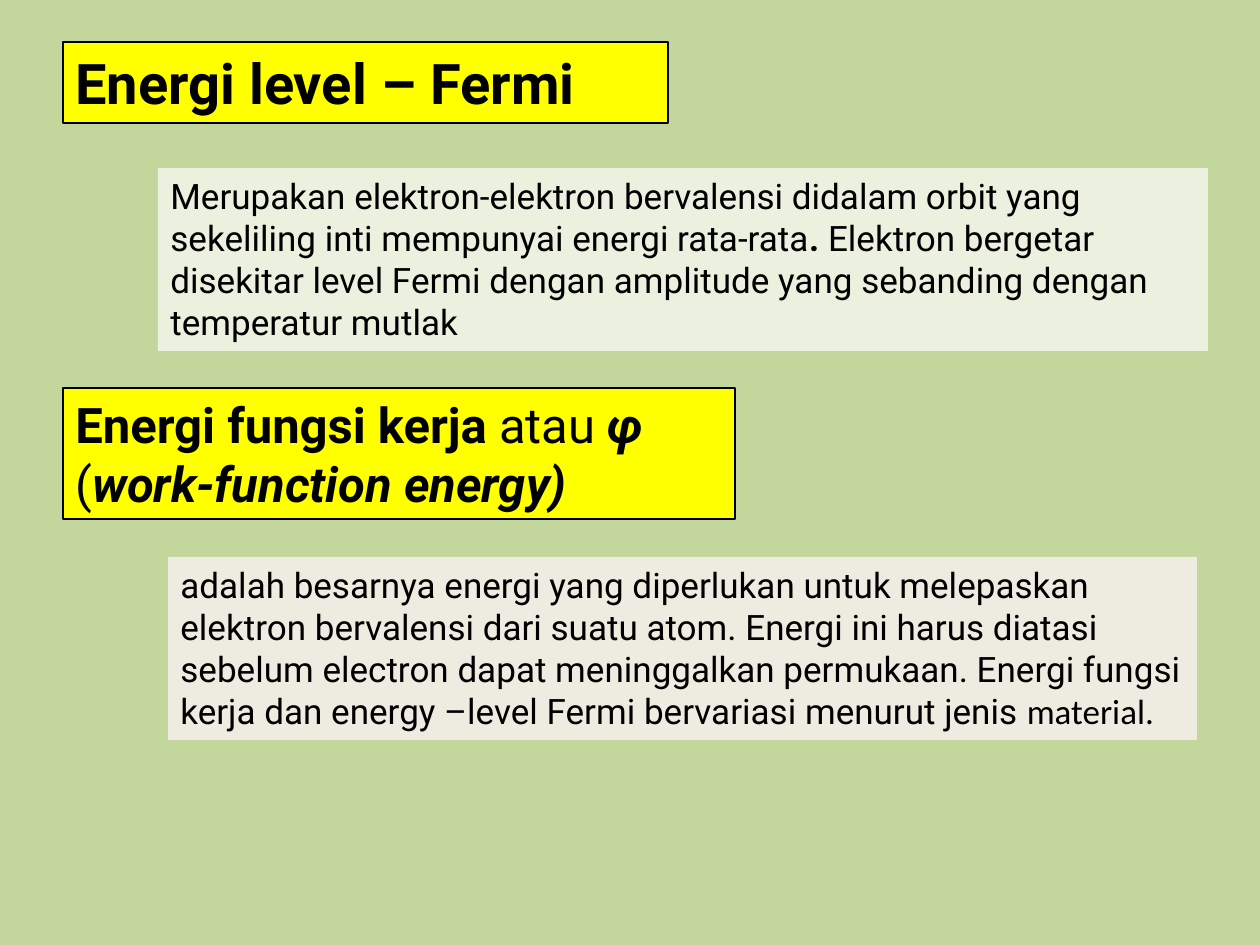
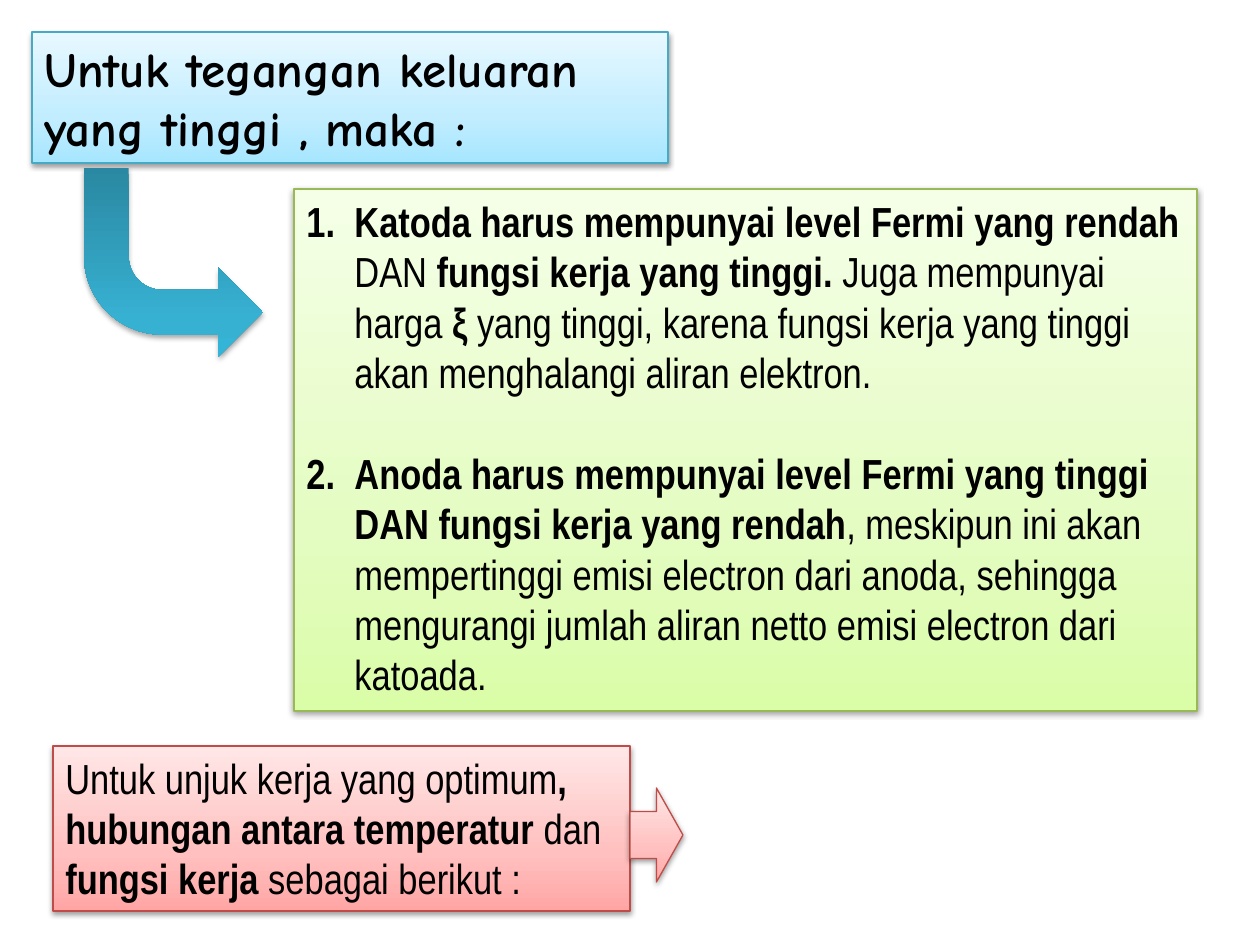
"""Build two slides on Fermi level and work-function energy."""
import pptx
import pptx.dml.color
import pptx.enum.shapes
import pptx.enum.text
import pptx.oxml
import pptx.oxml.ns
import pptx.util

RGB = pptx.dml.color.RGBColor
SHAPE = pptx.enum.shapes.MSO_SHAPE
PX = 914400 / 126
PAGE = (1260, 945)

BLACK = RGB(0x00, 0x00, 0x00)
WHITE = RGB(0xFF, 0xFF, 0xFF)
MOSS = RGB(0xC3, 0xD6, 0x9B)
YELLOW = RGB(0xFF, 0xFF, 0x00)
PALE_GREEN = RGB(0xEB, 0xF1, 0xDE)
CREAM = RGB(0xEE, 0xEC, 0xE1)
GREEN_EDGE = RGB(0x98, 0xB9, 0x55)
RED_EDGE = RGB(0xBF, 0x4C, 0x48)
BLUE_EDGE = RGB(0x46, 0xAA, 0xC5)

GREEN_FADE = ((0, RGB(0xDA, 0xFD, 0xA7)), (35, RGB(0xE4, 0xFC, 0xC2)), (100, RGB(0xF5, 0xFF, 0xE7)))
RED_FADE = ((0, RGB(0xFF, 0xA6, 0xA5)), (35, RGB(0xFF, 0xC0, 0xBF)), (100, RGB(0xFF, 0xE7, 0xE7)))
BLUE_FADE = ((0, RGB(0xA7, 0xE6, 0xFF)), (35, RGB(0xC1, 0xED, 0xFF)), (100, RGB(0xE7, 0xF8, 0xFF)))
TEAL_FADE = ((0, RGB(0x2A, 0x88, 0xA2)), (80, RGB(0x37, 0xB1, 0xD2)), (100, RGB(0x34, 0xB4, 0xD6)))

FERMI_TITLE = [[("Energi level – Fermi", "b")]]
FERMI_MEANING = [[
    ("Merupakan elektron-elektron bervalensi didalam orbit yang sekeliling inti "
     "mempunyai energi rata-rata", ""),
    (". ", "b"),
    ("Elektron bergetar disekitar level Fermi dengan amplitude yang sebanding "
     "dengan temperatur mutlak", ""),
]]
WORK_TITLE = [
    [("Energi fungsi kerja ", "b"), ("atau ", ""), ("φ", "bi")],
    [("(", ""), ("work-function energy)", "bi")],
]
WORK_MEANING = [[
    ("adalah besarnya energi yang diperlukan untuk melepaskan elektron bervalensi "
     "dari suatu atom. Energi ini harus diatasi sebelum electron dapat meninggalkan "
     "permukaan. Energi fungsi kerja dan energy –level Fermi bervariasi menurut jenis ", ""),
    ("material.", "", "Calibri"),
]]
HIGH_OUTPUT = [[("Untuk tegangan keluaran", "b")], [("yang tinggi , maka :", "b")]]
ELECTRODES = [
    [
        ("Katoda harus mempunyai level Fermi yang rendah", "b"),
        (" DAN ", ""),
        ("fungsi kerja yang tinggi. ", "b"),
        ("Juga mempunyai harga ", ""),
        ("ξ ", "b"),
        ("yang tinggi, karena fungsi kerja yang tinggi akan menghalangi aliran elektron.", ""),
    ],
    [
        ("Anoda harus mempunyai level Fermi yang tinggi DAN fungsi kerja yang rendah", "b"),
        (", meskipun ini akan mempertinggi emisi electron dari anoda, sehingga "
         "mengurangi jumlah aliran netto emisi electron dari katoada.", ""),
    ],
]
OPTIMUM = [[
    ("Untuk unjuk kerja yang optimum", ""),
    (", hubungan antara temperatur ", "b"),
    ("dan ", ""),
    ("fungsi kerja ", "b"),
    ("sebagai berikut :", ""),
]]

DEFINITIONS = [
    ((158, 168, 1050, 183), FERMI_MEANING, 20, PALE_GREEN, None),
    ((63, 42, 605, 81), FERMI_TITLE, 32, YELLOW, BLACK),
    ((63, 388, 672, 131), WORK_TITLE, 28, YELLOW, BLACK),
    ((168, 557, 1029, 183), WORK_MEANING, 20, CREAM, None),
]
CONDITIONS = [
    ((294, 189, 903, 522), ELECTRODES, "Arial Narrow", 24, GREEN_FADE, GREEN_EDGE, True),
    ((53, 746, 577, 165), OPTIMUM, "Arial Narrow", 24, RED_FADE, RED_EDGE, False),
    ((32, 32, 636, 131), HIGH_OUTPUT, "Comic Neue", 28, BLUE_FADE, BLUE_EDGE, False),
]


def emu(px):
    return pptx.util.Emu(round(px * PX))


def add_xml(parent, tag, **attributes):
    child = parent.makeelement(pptx.oxml.ns.qn(tag), attributes)
    parent.append(child)
    return child


def fade(shape, stops):
    properties = shape.element.spPr
    gradient = add_xml(properties, "a:gradFill", rotWithShape="1")
    properties.insert(2, gradient)
    stop_list = add_xml(gradient, "a:gsLst")
    for percent, color in stops:
        stop = add_xml(stop_list, "a:gs", pos=str(percent * 1000))
        add_xml(stop, "a:srgbClr", val=str(color))
    add_xml(gradient, "a:lin", ang="16200000", scaled="1")


def cast_shadow(shape, opacity, distance):
    effects = shape.element.spPr.find(pptx.oxml.ns.qn("a:effectLst"))
    shadow = add_xml(effects, "a:outerShdw", blurRad="40000", dist=str(distance),
                     dir="5400000", rotWithShape="0")
    color = add_xml(shadow, "a:srgbClr", val=str(BLACK))
    add_xml(color, "a:alpha", val=str(opacity * 1000))


def draw(slide, kind, place, fill, edge=None, opacity=38, distance=20000):
    shape = slide.shapes.add_shape(kind, *map(emu, place))
    if edge is None:
        shape.line.fill.background()
    else:
        shape.line.color.rgb = edge
        shape.line.width = pptx.util.Pt(0.75)
    shape.shadow.inherit = False
    if isinstance(fill, RGB):
        shape.fill.solid()
        shape.fill.fore_color.rgb = fill
    else:
        fade(shape, fill)
        cast_shadow(shape, opacity, distance)
    return shape


def write(shape, paragraphs, font="Roboto", size=20, color=BLACK, numbered=False):
    frame = shape.text_frame
    frame.word_wrap = True
    frame.vertical_anchor = pptx.enum.text.MSO_ANCHOR.TOP
    for index, runs in enumerate(paragraphs):
        paragraph = frame.add_paragraph() if index else frame.paragraphs[0]
        paragraph.alignment = pptx.enum.text.PP_ALIGN.LEFT
        if numbered:
            if index:
                paragraph.space_before = pptx.util.Pt(size * 1.2)
            layout = paragraph._p.get_or_add_pPr()
            layout.set("marL", str(emu(48)))
            layout.set("indent", str(-emu(48)))
            add_xml(layout, "a:buFont", typeface="+mj-lt")
            add_xml(layout, "a:buAutoNum", type="arabicPeriod")
        for text, style, *other_font in runs:
            run = paragraph.add_run()
            run.text = text
            run.font.name = other_font[0] if other_font else font
            run.font.size = pptx.util.Pt(size)
            run.font.bold = "b" in style
            run.font.italic = "i" in style
            run.font.color.rgb = color


def new_slide(deck, background):
    slide = deck.slides.add_slide(deck.slide_layouts[6])
    slide.background.fill.solid()
    slide.background.fill.fore_color.rgb = background
    return slide


def main():
    deck = pptx.Presentation()
    deck.slide_width, deck.slide_height = map(emu, PAGE)

    definitions = new_slide(deck, MOSS)
    for place, paragraphs, size, fill, edge in DEFINITIONS:
        write(draw(definitions, SHAPE.RECTANGLE, place, fill, edge), paragraphs, size=size)

    conditions = new_slide(deck, WHITE)
    for place, paragraphs, font, size, fill, edge, numbered in CONDITIONS:
        panel = draw(conditions, SHAPE.RECTANGLE, place, fill, edge)
        write(panel, paragraphs, font=font, size=size, numbered=numbered)
    draw(conditions, SHAPE.RIGHT_ARROW, (630, 788, 53, 94), RED_FADE, RED_EDGE)
    turn = draw(conditions, SHAPE.BENT_ARROW, (84, 168, 179, 189), TEAL_FADE,
                opacity=35, distance=23000)
    turn.rotation = 180
    turn.element.spPr.xfrm.set("flipH", "1")

    deck.save("out.pptx")


if __name__ == "__main__":
    main()
